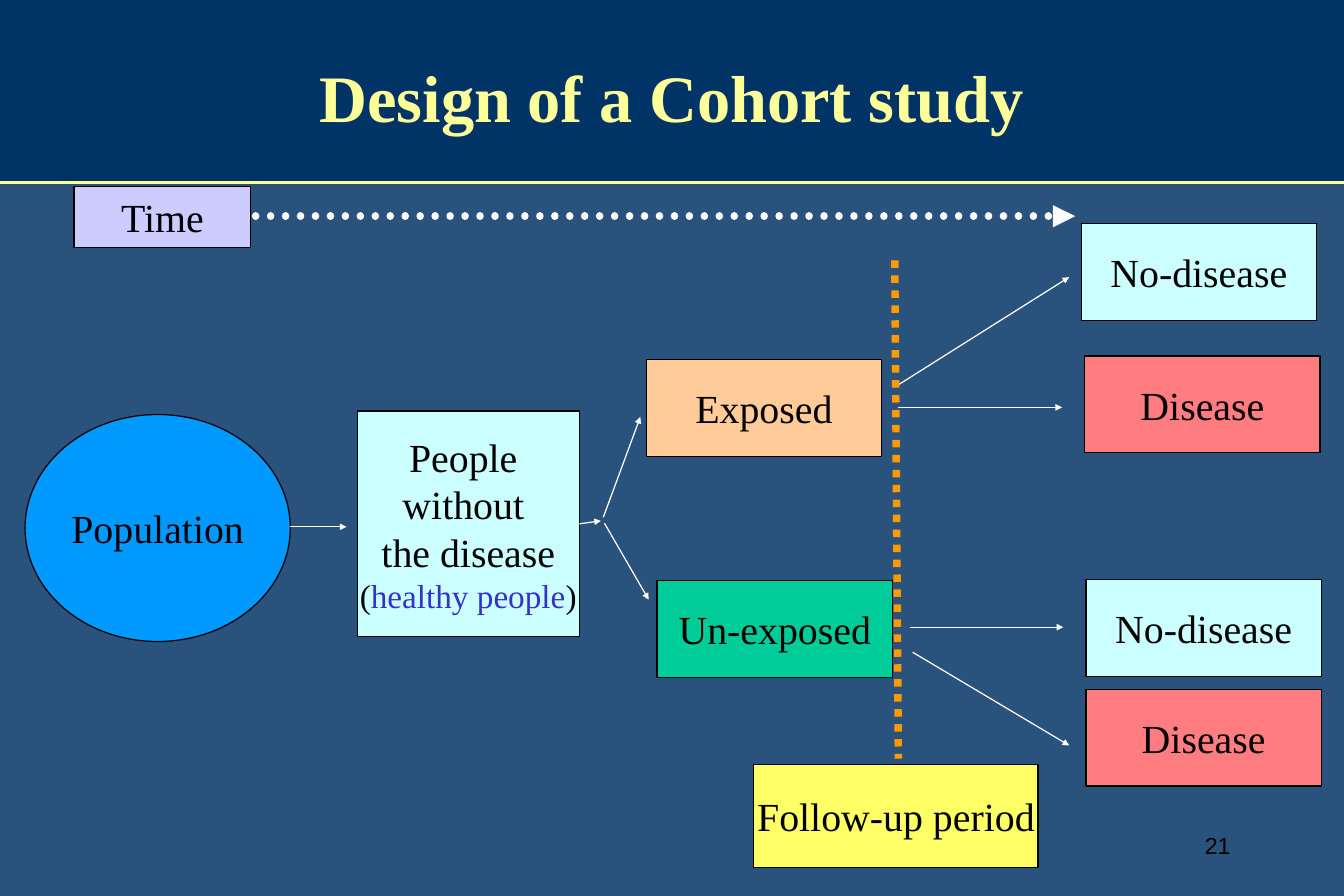
from dataclasses import dataclass

import lxml.etree
import pptx
import pptx.dml.color
import pptx.enum.dml
import pptx.enum.shapes
import pptx.enum.text
import pptx.oxml.ns
import pptx.util

Inches = pptx.util.Inches
Pt = pptx.util.Pt
Preset = pptx.enum.shapes.MSO_SHAPE
Align = pptx.enum.text.PP_ALIGN
qn = pptx.oxml.ns.qn

SERIF = "Times New Roman"
COLOURS = {
    "background": "29537D",
    "header": "003366",
    "title": "FFFF99",
    "black": "000000",
    "white": "FFFFFF",
    "population": "0099FF",
    "healthy": "CCFFFF",
    "healthy text": "3333CC",
    "exposed": "FFCC99",
    "unexposed": "00CC99",
    "disease": "FF7C80",
    "follow-up": "FFFF66",
    "follow-up line": "FF9900",
    "time": "CCCCFF",
}
RIGHT_SIDE = 3


@dataclass
class Box:
    text: str
    colour: str
    left: float
    top: float
    width: float = 1.97
    height: float = 0.81
    preset: Preset = Preset.RECTANGLE


@dataclass
class Line:
    start: tuple[float, float]
    end: tuple[float, float]
    colour: str = "white"
    width: float = 0.75
    dotted: bool = False
    round_cap: bool = False
    arrow_size: str = "sm"


PEOPLE = Box("People \nwithout \nthe disease\n", "healthy", 2.99, 3.44, 1.86, 1.89)
BOXES = [
    Box("Population", "population", 0.21, 3.47, 2.22, 1.9, Preset.OVAL),
    Box("Exposed", "exposed", 5.41, 3.01),
    Box("Un-exposed", "unexposed", 5.5, 4.86),
    Box("No-disease", "healthy", 9.05, 1.87),
    Box("Disease", "disease", 9.08, 2.98),
    Box("No-disease", "healthy", 9.09, 4.85),
    Box("Disease", "disease", 9.09, 5.77),
    Box("Follow-up period", "follow-up", 6.31, 6.4, 2.38, 0.86),
    Box("Time", "time", 0.62, 1.56, 1.48, 0.51),
]

HEADER_RULE = Line((0, 1.53), (11.25, 1.53), "title", 2, arrow_size="")
PEOPLE_ARROW = Line((4.85, 4.38), (5.03, 4.36))
LINES = [
    Line((2.43, 4.41), (2.9, 4.41)),
    Line((5.05, 4.33), (5.36, 3.49)),
    Line((5.06, 4.38), (5.43, 5.02)),
    Line((7.52, 3.41), (8.89, 3.41)),
    Line((7.62, 5.25), (8.9, 5.25)),
    Line((7.49, 3.24), (8.95, 2.32)),
    Line((7.64, 5.46), (8.95, 6.24)),
    Line((7.49, 2.18), (7.52, 6.35), "follow-up line", 4.5, True, arrow_size=""),
    Line((2.14, 1.81), (9, 1.81), "white", 4.5, True, True, "med"),
]


def rgb(name: str) -> pptx.dml.color.RGBColor:
    return pptx.dml.color.RGBColor.from_string(COLOURS[name])


def format_run(run, size: float, colour: str = "black", font: str = SERIF) -> None:
    run.font.name = font
    run.font.size = Pt(size)
    run.font.color.rgb = rgb(colour)


def draw_box(slide, box: Box):
    shape = slide.shapes.add_shape(
        box.preset, Inches(box.left), Inches(box.top), Inches(box.width), Inches(box.height))
    shape.shadow.inherit = False
    shape.fill.solid()
    shape.fill.fore_color.rgb = rgb(box.colour)
    shape.line.color.rgb = rgb("black")
    shape.line.width = Pt(0.75)
    text_frame = shape.text_frame
    text_frame.word_wrap = False
    text_frame.vertical_anchor = pptx.enum.text.MSO_ANCHOR.MIDDLE
    text_frame.text = box.text
    for paragraph in text_frame.paragraphs:
        paragraph.alignment = Align.CENTER
        for run in paragraph.runs:
            format_run(run, 24)
    return shape


def draw_people(slide):
    shape = draw_box(slide, PEOPLE)
    healthy_note = shape.text_frame.paragraphs[-1]
    for text, colour in (("(", "black"), ("healthy people", "healthy text"), (")", "black")):
        run = healthy_note.add_run()
        run.text = text
        format_run(run, 20, colour)
    return shape


def draw_line(slide, line: Line):
    points = [Inches(value) for value in line.start + line.end]
    connector = slide.shapes.add_connector(pptx.enum.shapes.MSO_CONNECTOR.STRAIGHT, *points)
    connector.line.color.rgb = rgb(line.colour)
    connector.line.width = Pt(line.width)
    if line.dotted:
        connector.line.dash_style = pptx.enum.dml.MSO_LINE.ROUND_DOT
    properties = connector.element.spPr
    outline = properties.find(qn("a:ln"))
    if line.round_cap:
        outline.set("cap", "rnd")
    if line.arrow_size:
        lxml.etree.SubElement(outline, qn("a:tailEnd"), type="triangle",
                              w=line.arrow_size, len=line.arrow_size)
    lxml.etree.SubElement(properties, qn("a:effectLst"))
    return connector


def draw_header(slide) -> None:
    band = slide.shapes.add_shape(Preset.RECTANGLE, 0, 0, Inches(11.25), Inches(1.53))
    band.shadow.inherit = False
    band.fill.solid()
    band.fill.fore_color.rgb = rgb("header")
    band.line.fill.background()
    title = slide.shapes.title
    title.element.addprevious(band.element)
    title.left, title.top = Inches(0.84), Inches(0.18)
    title.width, title.height = Inches(9.56), Inches(1.36)
    title.text_frame.text = "Design of a Cohort study"
    title.text_frame.vertical_anchor = pptx.enum.text.MSO_ANCHOR.MIDDLE
    paragraph = title.text_frame.paragraphs[0]
    paragraph.alignment = Align.CENTER
    paragraph.line_spacing = 0.85
    format_run(paragraph.runs[0], 40, "title")
    paragraph.runs[0].font.bold = True
    draw_line(slide, HEADER_RULE)


def draw_slide_number(slide) -> None:
    number = slide.shapes.add_textbox(Inches(8.1), Inches(6.82), Inches(2.3), Inches(0.51))
    number.text_frame.word_wrap = True
    number.text_frame.vertical_anchor = pptx.enum.text.MSO_ANCHOR.MIDDLE
    number.text_frame.text = "21"
    paragraph = number.text_frame.paragraphs[0]
    paragraph.alignment = Align.RIGHT
    format_run(paragraph.runs[0], 14, font="Arial")


def main() -> None:
    presentation = pptx.Presentation()
    presentation.slide_width = Inches(11.25)
    presentation.slide_height = Inches(7.5)
    slide = presentation.slides.add_slide(presentation.slide_layouts[5])
    slide.background.fill.solid()
    slide.background.fill.fore_color.rgb = rgb("background")
    draw_header(slide)
    draw_slide_number(slide)
    people = draw_people(slide)
    for box in BOXES:
        draw_box(slide, box)
    draw_line(slide, PEOPLE_ARROW).begin_connect(people, RIGHT_SIDE)
    for line in LINES:
        draw_line(slide, line)
    presentation.save("out.pptx")


if __name__ == "__main__":
    main()
